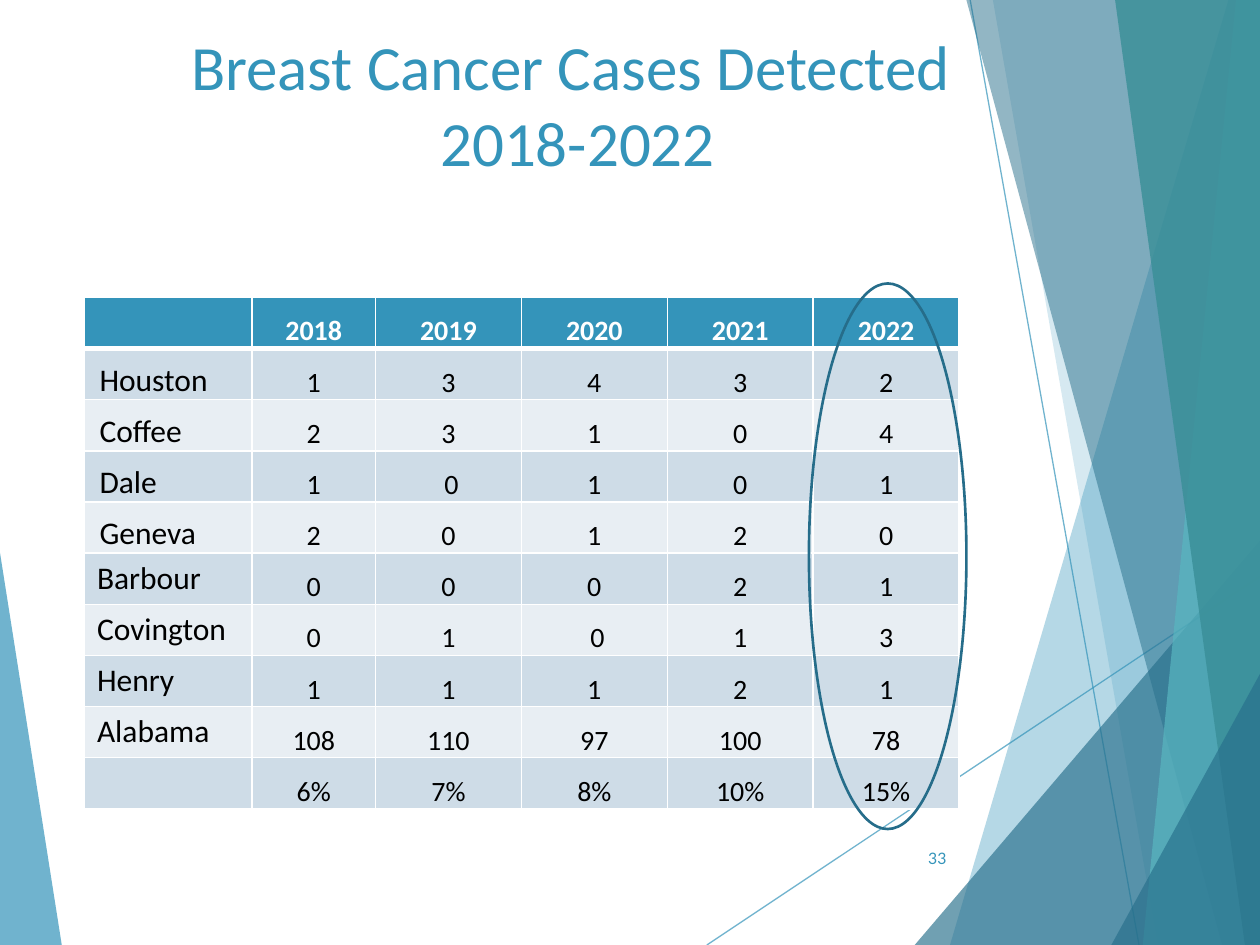
from dataclasses import dataclass

from lxml import etree
from pptx import Presentation
from pptx.dml.color import RGBColor
from pptx.enum.shapes import MSO_CONNECTOR, MSO_SHAPE
from pptx.enum.text import MSO_ANCHOR, PP_ALIGN
from pptx.oxml.ns import qn
from pptx.util import Inches, Pt

LEFT, MID, RIGHT = PP_ALIGN.LEFT, PP_ALIGN.CENTER, PP_ALIGN.RIGHT
TOP, CENTER, BOTTOM = MSO_ANCHOR.TOP, MSO_ANCHOR.MIDDLE, MSO_ANCHOR.BOTTOM
OVAL = MSO_SHAPE.OVAL
STRAIGHT = MSO_CONNECTOR.STRAIGHT


@dataclass(frozen=True)
class Theme:
    blue: str = "3494BA"
    deep: str = "276F8B"
    aqua: str = "58B6C0"
    teal: str = "3A8F98"
    ring: str = "266D8A"
    white: str = "FFFFFF"
    black: str = "000000"
    bands: tuple = ("CEDCE7", "E8EEF3")
    font: str = "Calibri"
    small: str = "Lato"
    head: int = 36
    label: int = 18
    body: int = 16
    note: int = 9


class Deck:
    def __init__(self, theme):
        self.theme = theme
        self.show = Presentation()
        self.show.slide_width = Inches(10)
        self.show.slide_height = Inches(7.5)
        self.slide = self.show.slides.add_slide(self.show.slide_layouts[5])
        self.shapes = self.slide.shapes

    def x(self, share):
        return round(self.show.slide_width * share / 100)

    def y(self, share):
        return round(self.show.slide_height * share / 100)

    def box(self, x, y, w, h):
        return self.x(x), self.y(y), self.x(w), self.y(h)

    def fade(self, fill, color, alpha):
        fill.solid()
        fill.fore_color.rgb = RGBColor.from_string(color)
        tint = fill._xPr.find(qn("a:solidFill"))[0]
        etree.SubElement(tint, qn("a:alpha"), val=str(alpha * 1000))

    def label(self, frame, text, size, color, align, font=None, bold=False):
        frame.text = text
        for para in frame.paragraphs:
            para.alignment = align
            for run in para.runs:
                run.font.size = Pt(size)
                run.font.name = font or self.theme.font
                run.font.bold = bold
                run.font.color.rgb = RGBColor.from_string(color)

    def shard(self, points, color, alpha):
        spots = [(self.x(x), self.y(y)) for x, y in points]
        pen = self.shapes.build_freeform(*spots[0], scale=1.0)
        pen.add_line_segments(spots[1:], close=True)
        shape = pen.convert_to_shape()
        shape.shadow.inherit = False
        shape.line.fill.background()
        self.fade(shape.fill, color, alpha)

    def line(self, x1, y1, x2, y2, color, alpha):
        rule = self.shapes.add_connector(
            STRAIGHT, self.x(x1), self.y(y1), self.x(x2), self.y(y2))
        rule.line.width = Pt(0.75)
        self.fade(rule.line.fill, color, alpha)
        etree.SubElement(rule._element.spPr, qn("a:effectLst"))

    def title(self, text, *area):
        head = self.shapes.title
        head.left, head.top, head.width, head.height = self.box(*area)
        head.text_frame.word_wrap = True
        head.text_frame.vertical_anchor = TOP
        self.label(head.text_frame, text, self.theme.head, self.theme.blue, MID)
        self.shapes._spTree.append(head._element)

    def edge(self, cell, widths):
        props = cell._tc.get_or_add_tcPr()
        for i, (side, width) in enumerate(zip("LRTB", widths)):
            ln = etree.Element(qn("a:ln" + side), w=str(Pt(width)))
            fill = etree.SubElement(ln, qn("a:solidFill"))
            etree.SubElement(fill, qn("a:srgbClr"), val=self.theme.white)
            props.insert(i, ln)

    def cell(self, cell, text, row, col):
        theme = self.theme
        head = row == 0
        fill = theme.blue if head else theme.bands[(row - 1) % 2]
        cell.fill.solid()
        cell.fill.fore_color.rgb = RGBColor.from_string(fill)
        self.edge(cell, (1, 1, 3 if row == 1 else 1, 3 if head else 1))
        if col or 0 < row < 5:
            cell.vertical_anchor = BOTTOM
            cell.margin_left = Inches(0.01 if col else 0.12)
            cell.margin_right = cell.margin_top = Inches(0.01)
            cell.margin_bottom = 0
        if text:
            self.label(cell.text_frame, text, theme.body if col else theme.label,
                       theme.white if head else theme.black,
                       MID if col else LEFT, bold=head)

    def table(self, rows, widths, *area):
        grid = self.shapes.add_table(
            len(rows), len(widths), *self.box(*area)).table
        for col, width in zip(grid.columns, widths):
            col.width = self.x(width)
        for r, row in enumerate(rows):
            for c, text in enumerate(row):
                self.cell(grid.cell(r, c), text, r, c)

    def note(self, text, *area):
        frame = self.shapes.add_textbox(*self.box(*area)).text_frame
        frame.word_wrap = True
        frame.vertical_anchor = CENTER
        self.label(frame, text, self.theme.note, self.theme.blue, RIGHT,
                   self.theme.small)

    def ring(self, *area):
        oval = self.shapes.add_shape(OVAL, *self.box(*area))
        oval.shadow.inherit = False
        oval.fill.background()
        oval.line.width = Pt(1.5)
        oval.line.color.rgb = RGBColor.from_string(self.theme.ring)


CASES = [
    ["", "2018", "2019", "2020", "2021", "2022"],
    ["Houston", "1", "3", "4", "3", "2"],
    ["Coffee", "2", "3", "1", "0", "4"],
    ["Dale", "1", " 0", "1", "0", "1"],
    ["Geneva", "2", "0", "1", "2", "0"],
    ["Barbour", "0", "0", "0", "2", "1"],
    ["Covington", "0", "1", " 0", "1", "3"],
    ["Henry", "1", "1", "1", "2", "1"],
    ["Alabama", "108", "110", "97", "100", "78"],
    ["", "6%", "7%", "8%", "10%", "15%"],
]


def main():
    theme = Theme()
    deck = Deck(theme)
    deck.shard([(0, 58.5), (4.9, 100), (0, 100)], theme.blue, 70)
    deck.line(56.1, 100, 100, 61, theme.blue, 70)
    deck.line(77, 0, 90.4, 100, theme.blue, 70)
    shards = [
        (97.5, 0, 75.4, 100, theme.blue, 36),
        (78.8, 0, 91.9, 100, theme.blue, 20),
        (100, 57.2, 72.6, 100, theme.deep, 66),
        (76.7, 0, 97, 100, theme.deep, 50),
        (98.1, 0, 90.7, 100, theme.aqua, 70),
        (88.5, 0, 98.8, 100, theme.teal, 82),
        (100, 71.3, 88.2, 100, theme.deep, 66),
    ]
    for x1, y1, x2, y2, color, alpha in shards:
        deck.shard([(x1, y1), (x2, y2), (100, 100), (100, y1)], color, alpha)
    deck.title("Breast Cancer Cases Detected \v2018-2022", 6.7, 2.27, 78.3, 20)
    deck.table(CASES, [13.3, 9.8] + [11.58] * 4, 6.7, 31.47, 69.4, 54.13)
    deck.note("33", 70.5, 88.13, 5.6, 5.33)
    deck.ring(64.2, 30, 12.5, 57.73)
    deck.show.save("out.pptx")


if __name__ == "__main__":
    main()
